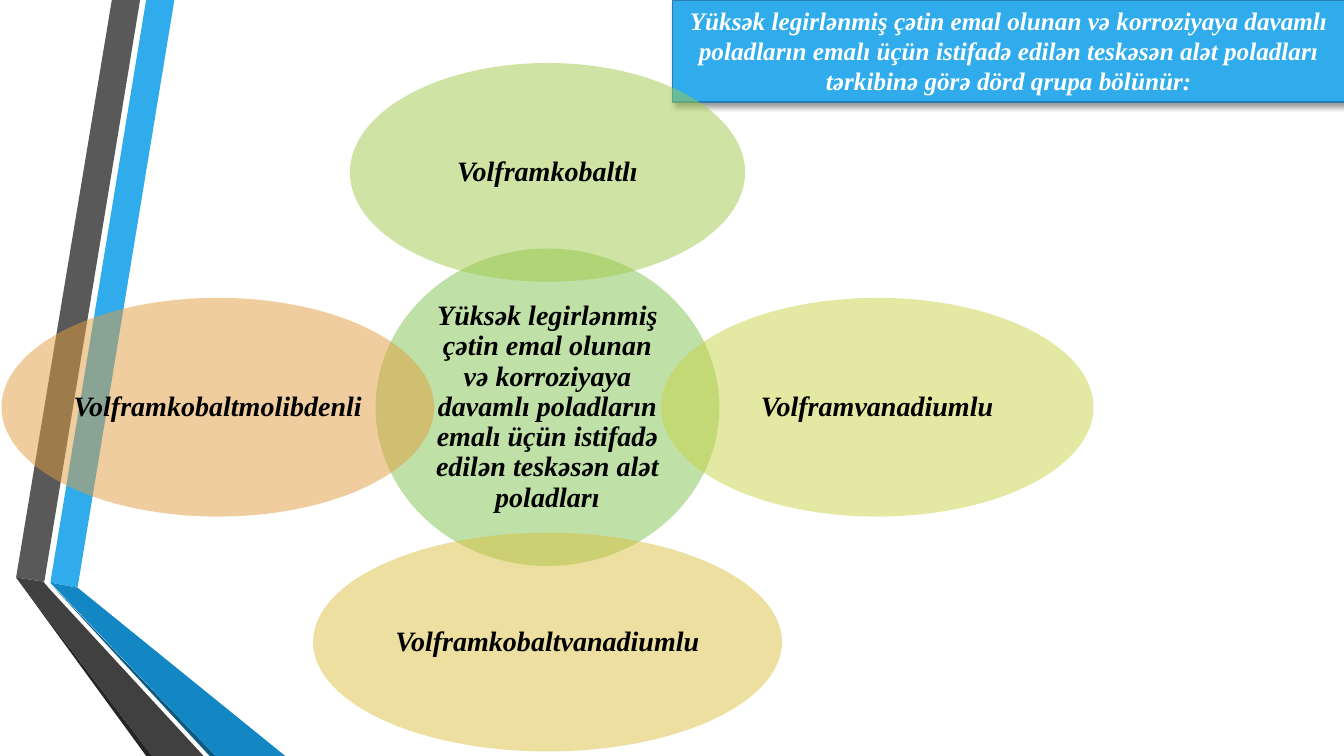
import pptx
import pptx.dml.color
import pptx.enum.shapes
import pptx.enum.text
import pptx.oxml
import pptx.oxml.ns
import pptx.util
from pptx.dml.color import RGBColor
from pptx.util import Inches

BLACK = RGBColor(0x00, 0x00, 0x00)
WHITE = RGBColor(0xFF, 0xFF, 0xFF)
SKY = RGBColor(0x30, 0xAC, 0xEC)
SKY_EDGE = RGBColor(0x24, 0x7F, 0xAF)
SKY_DEEP = RGBColor(0x12, 0x87, 0xC3)
NAVY = RGBColor(0x0C, 0x5A, 0x82)
GREY = RGBColor(0x59, 0x59, 0x59)
CHARCOAL = RGBColor(0x40, 0x40, 0x40)
SOOT = RGBColor(0x26, 0x26, 0x26)
GREEN = RGBColor(0x80, 0xC3, 0x4F)
LIME = RGBColor(0xA1, 0xCB, 0x4A)
OLIVE = RGBColor(0xC8, 0xD3, 0x46)
GOLD = RGBColor(0xDB, 0xC0, 0x42)
ORANGE = RGBColor(0xE2, 0x9D, 0x3E)

RIBBONS = [
    (SKY, [(0.5, 5.78), (0.77, 5.83), (1.73, 0), (1.45, 0)]),
    (GREY, [(1.39, 0), (1.11, 0), (0.16, 5.73), (0.44, 5.77)]),
    (SOOT, [(0.16, 5.73), (1.45, 7.5), (1.51, 7.5)]),
    (NAVY, [(0.5, 5.79), (2.08, 7.5), (2.14, 7.5)]),
    (SKY_DEEP, [(0.5, 5.78), (2.14, 7.5), (2.83, 7.5), (0.77, 5.83)]),
    (CHARCOAL, [(2.02, 7.5), (0.48, 5.83), (0.43, 5.77), (0.16, 5.73), (1.51, 7.5)]),
]

BANNER = (
    "Yüksək legirlənmiş çətin emal olunan və korroziyaya davamlı poladların "
    "emalı üçün istifadə edilən teskəsən alət poladları tərkibinə görə dörd qrupa bölünür:"
)
HUB = (
    "Yüksək legirlənmiş çətin emal olunan və korroziyaya davamlı poladların "
    "emalı üçün istifadə edilən teskəsən alət poladları"
)

HUB_X, HUB_Y = 5.43, 4.04
PETAL_HEIGHT = 2.17
REACH_X, REACH_Y = 3.27, 2.33

PETALS = [
    ("Volframkobaltlı", 0, -1, 3.92, LIME),
    ("Volframvanadiumlu", 1, 0, 4.29, OLIVE),
    ("Volframkobaltvanadiumlu", 0, 1, 4.65, GOLD),
    ("Volframkobaltmolibdenli", -1, 0, 4.29, ORANGE),
]


class SteelSlide:
    font = "Times New Roman"

    def __init__(self, deck):
        self.slide = deck.slides.add_slide(deck.slide_layouts[6])

    def ribbon(self, color, corners):
        points = [(Inches(x), Inches(y)) for x, y in corners]
        outline = self.slide.shapes.build_freeform(*points[0], scale=1.0)
        outline.add_line_segments(points[1:], close=True)
        band = outline.convert_to_shape()
        self.paint(band, color)

    def paint(self, shape, color):
        shape.shadow.inherit = False
        shape.fill.solid()
        shape.fill.fore_color.rgb = color
        shape.line.fill.background()

    def label(self, shape, text, size, color):
        frame = shape.text_frame
        frame.word_wrap = True
        frame.text = text
        paragraph = frame.paragraphs[0]
        paragraph.alignment = pptx.enum.text.PP_ALIGN.CENTER
        font = paragraph.runs[0].font
        font.name = self.font
        font.size = pptx.util.Pt(size)
        font.bold = font.italic = True
        font.color.rgb = color
        return frame

    def banner(self, text, left, top, width, height):
        box = self.slide.shapes.add_shape(
            pptx.enum.shapes.MSO_SHAPE.RECTANGLE,
            Inches(left), Inches(top), Inches(width), Inches(height),
        )
        self.paint(box, SKY)
        box.line.color.rgb = SKY_EDGE
        box.line.width = pptx.util.Pt(1.25)
        effects = box._element.spPr.find(pptx.oxml.ns.qn("a:effectLst"))
        effects.append(pptx.oxml.parse_xml(
            f'<a:outerShdw {pptx.oxml.ns.nsdecls("a")} blurRad="50800" dist="38100" '
            'dir="2700000" algn="tl" rotWithShape="0"><a:srgbClr val="000000">'
            '<a:alpha val="40000"/></a:srgbClr></a:outerShdw>'
        ))
        frame = self.label(box, text, 18, WHITE)
        frame.vertical_anchor = pptx.enum.text.MSO_ANCHOR.TOP
        frame.auto_size = pptx.enum.text.MSO_AUTO_SIZE.SHAPE_TO_FIT_TEXT

    def oval(self, text, center_x, center_y, width, height, color):
        bubble = self.slide.shapes.add_shape(
            pptx.enum.shapes.MSO_SHAPE.OVAL,
            Inches(center_x - width / 2), Inches(center_y - height / 2),
            Inches(width), Inches(height),
        )
        self.paint(bubble, color)
        tint = bubble._element.spPr.find(".//" + pptx.oxml.ns.qn("a:srgbClr"))
        tint.append(pptx.oxml.parse_xml(
            f'<a:alpha {pptx.oxml.ns.nsdecls("a")} val="50000"/>'
        ))
        frame = self.label(bubble, text, 20, BLACK)
        frame.vertical_anchor = pptx.enum.text.MSO_ANCHOR.MIDDLE
        frame.margin_left = frame.margin_right = Inches(0.03)
        frame.margin_top = frame.margin_bottom = Inches(0.03)
        frame.paragraphs[0].line_spacing = 0.9


def main():
    deck = pptx.Presentation()
    deck.slide_width = Inches(13.33)
    deck.slide_height = Inches(7.5)
    steel = SteelSlide(deck)
    for color, corners in RIBBONS:
        steel.ribbon(color, corners)
    steel.banner(BANNER, 6.67, 0, 6.67, 1.01)
    steel.oval(HUB, HUB_X, HUB_Y, 3.41, 3.15, GREEN)
    for name, step_x, step_y, width, color in PETALS:
        steel.oval(
            name, HUB_X + step_x * REACH_X, HUB_Y + step_y * REACH_Y,
            width, PETAL_HEIGHT, color,
        )
    deck.save("out.pptx")


if __name__ == "__main__":
    main()
